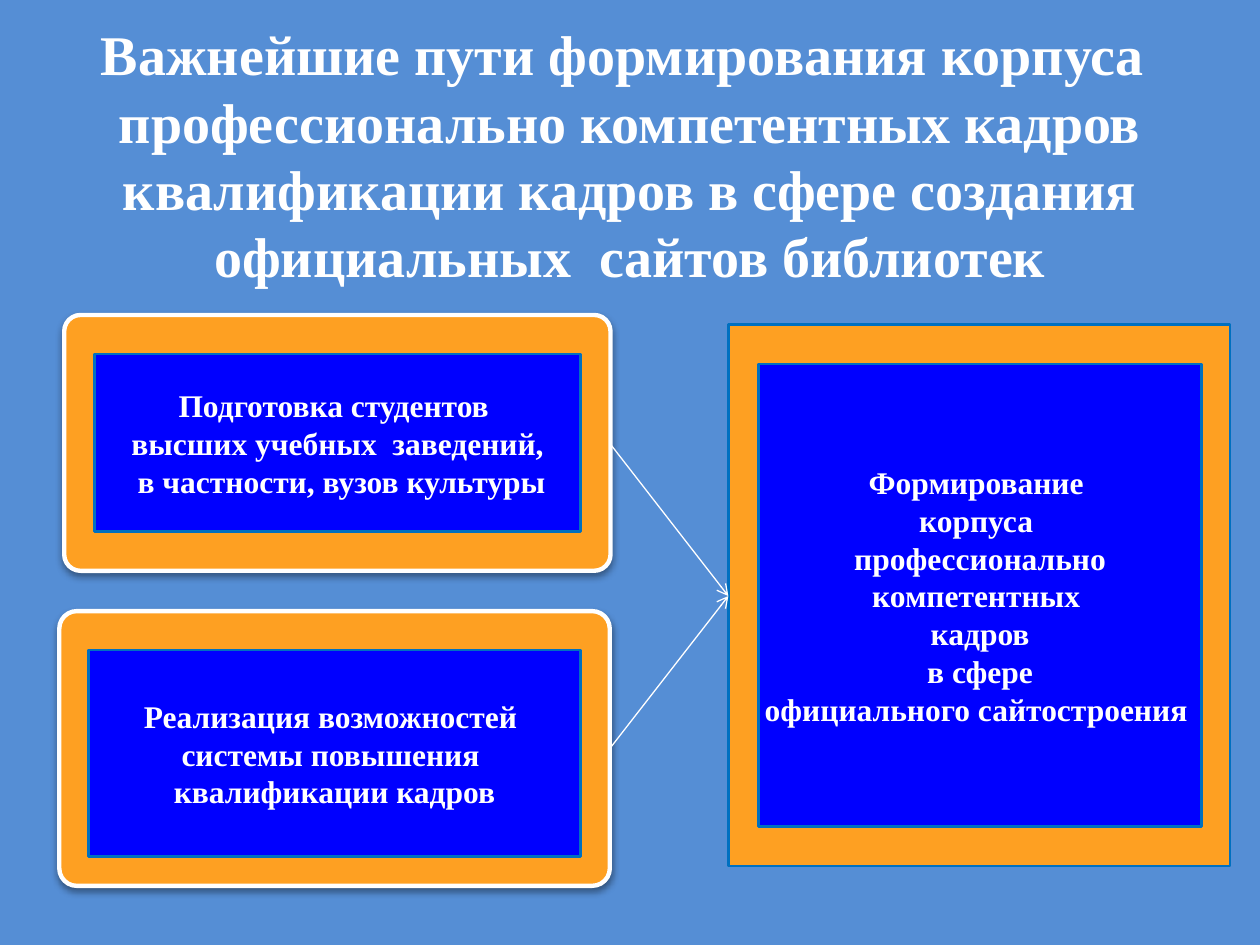
from lxml import etree
from pptx import Presentation
from pptx.dml.color import RGBColor
from pptx.enum.shapes import MSO_CONNECTOR, MSO_SHAPE
from pptx.enum.text import MSO_ANCHOR, PP_ALIGN
from pptx.oxml import parse_xml
from pptx.oxml.ns import nsdecls, qn
from pptx.util import Pt

RECTANGLE, ROUNDED = MSO_SHAPE.RECTANGLE, MSO_SHAPE.ROUNDED_RECTANGLE
STRAIGHT = MSO_CONNECTOR.STRAIGHT
CENTER, TOP, MIDDLE = PP_ALIGN.CENTER, MSO_ANCHOR.TOP, MSO_ANCHOR.MIDDLE


class Theme:
    background = RGBColor.from_string("558ED5")
    frame = RGBColor.from_string("FEA022")
    panel = RGBColor.from_string("0000FF")
    border = RGBColor.from_string("0070C0")
    white = RGBColor.from_string("FFFFFF")
    font = "Times New Roman"
    title_size, label_size = 32, 18
    border_width, frame_width, arrow_width = 1.5, 2.5, 0.75


class Slide:
    """Draws styled elements on one page, with lengths in points."""

    def __init__(self, deck, theme):
        self.theme = theme
        self.page = deck.slides.add_slide(deck.slide_layouts[6])
        fill = self.page.background.fill
        fill.solid()
        fill.fore_color.rgb = theme.background

    def add_lines(self, text_frame, lines, size, anchor, wrap):
        text_frame.word_wrap = wrap
        text_frame.vertical_anchor = anchor
        for index, line in enumerate(lines):
            para = text_frame.add_paragraph() if index else text_frame.paragraphs[0]
            para.alignment = CENTER
            span = para.add_run()
            span.text = line
            span.font.name = self.theme.font
            span.font.size = Pt(size)
            span.font.bold = True
            span.font.color.rgb = self.theme.white

    def title(self, place, text):
        box = self.page.shapes.add_textbox(*map(Pt, place))
        self.add_lines(box.text_frame, [text], self.theme.title_size, TOP, True)

    def block(self, kind, place, fill, line, width):
        box = self.page.shapes.add_shape(kind, *map(Pt, place))
        box.shadow.inherit = False
        box.fill.solid()
        box.fill.fore_color.rgb = fill
        box.line.color.rgb = line
        box.line.width = Pt(width)
        return box

    def frame(self, place):
        theme = self.theme
        return self.block(RECTANGLE, place, theme.frame, theme.border, theme.border_width)

    def rounded_frame(self, place):
        theme = self.theme
        box = self.block(ROUNDED, place, theme.frame, theme.white, theme.frame_width)
        box.adjustments[0] = 0.064
        effects = box._element.spPr.find(qn("a:effectLst"))
        effects.append(parse_xml(
            f'<a:outerShdw {nsdecls("a")} blurRad="{Pt(4.1)}" dist="{Pt(2)}" '
            'dir="5400000" rotWithShape="0"><a:srgbClr val="000000">'
            '<a:alpha val="40000"/></a:srgbClr></a:outerShdw>'))

    def panel(self, place, lines):
        theme = self.theme
        box = self.block(RECTANGLE, place, theme.panel, theme.border, theme.border_width)
        self.add_lines(box.text_frame, lines, theme.label_size, MIDDLE, False)

    def arrow(self, start, end):
        connector = self.page.shapes.add_connector(STRAIGHT, *map(Pt, start + end))
        connector.line.color.rgb = self.theme.white
        connector.line.width = Pt(self.theme.arrow_width)
        outline = connector._element.spPr.find(qn("a:ln"))
        etree.SubElement(outline, qn("a:tailEnd"), type="arrow")
        etree.SubElement(connector._element.spPr, qn("a:effectLst"))


def main():
    deck = Presentation()
    deck.slide_width, deck.slide_height = Pt(720), Pt(540)
    slide = Slide(deck, Theme())

    slide.frame((416.2, 185.4, 286.6, 309.6))
    slide.rounded_frame((33.9, 349.2, 314.6, 157))
    slide.rounded_frame((36.7, 180, 312.2, 146.2))
    slide.panel((54, 202.3, 277.9, 101.5), [
        "Подготовка студентов ",
        "высших учебных  заведений,",
        " в частности, вузов культуры",
    ])
    slide.panel((433.4, 208.1, 253.4, 264.2), [
        "Формирование ",
        "корпуса ",
        " профессионально ",
        "компетентных ",
        "кадров",
        " в сфере ",
        "официального сайтостроения ",
    ])
    slide.panel((50.4, 371.5, 281.5, 118.1), [
        "Реализация возможностей ",
        "системы повышения ",
        "квалификации кадров",
    ])
    for start_y in (253.4, 427.7):
        slide.arrow((348.5, start_y), (416.2, 340.6))
    slide.title(
        (11.5, 7.9, 697, 162.7),
        "Важнейшие пути формирования корпуса  профессионально компетентных кадров "
        "квалификации кадров в сфере создания официальных  сайтов библиотек")

    deck.save("out.pptx")


if __name__ == "__main__":
    main()
